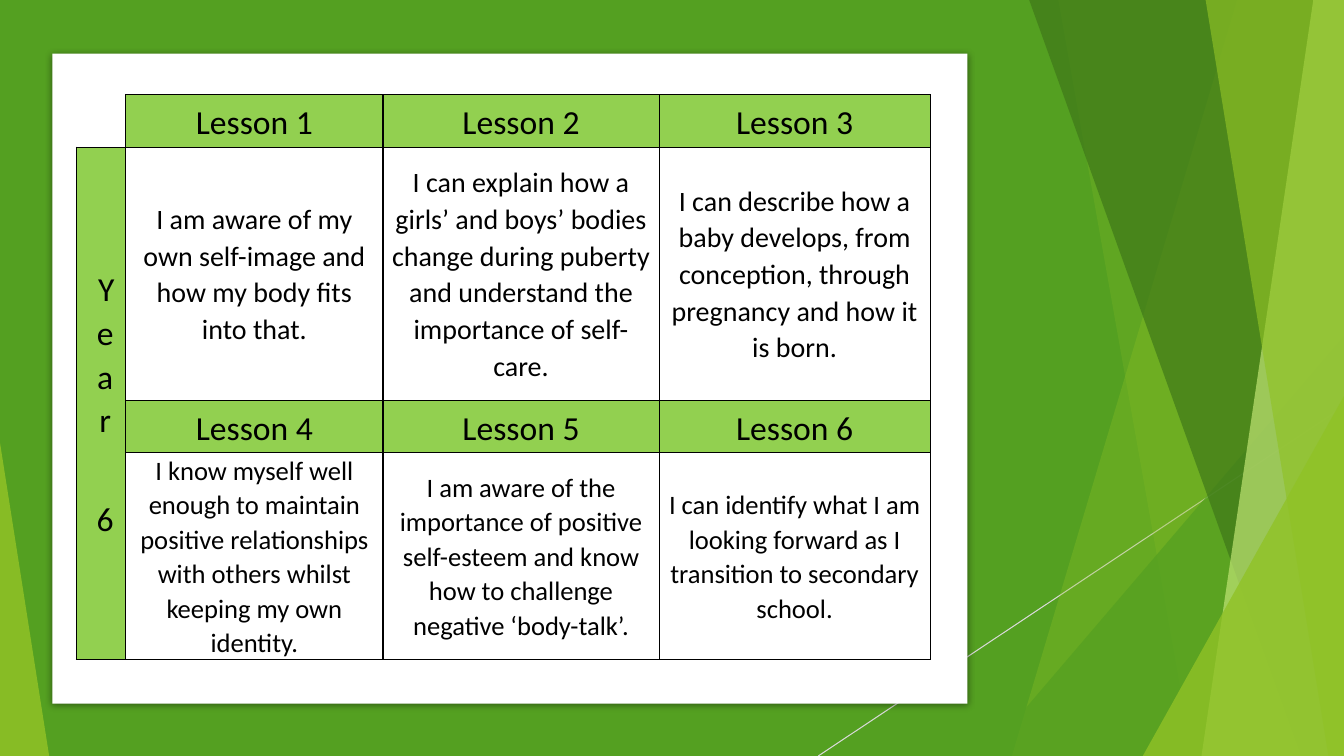
from dataclasses import dataclass

from lxml import etree
from pptx import Presentation
from pptx.dml.color import RGBColor
from pptx.enum.shapes import MSO_CONNECTOR, MSO_SHAPE
from pptx.enum.text import MSO_ANCHOR, PP_ALIGN
from pptx.oxml.ns import qn
from pptx.shapes.autoshape import Shape
from pptx.slide import Slide
from pptx.table import _Cell
from pptx.util import Cm, Pt

RECTANGLE = MSO_SHAPE.RECTANGLE
TRIANGLE = MSO_SHAPE.ISOSCELES_TRIANGLE
STRAIGHT = MSO_CONNECTOR.STRAIGHT
CENTER = PP_ALIGN.CENTER
MIDDLE = MSO_ANCHOR.MIDDLE

COLORS = {
    "green": "54A021",
    "lime": "90C226",
    "forest": "3F7819",
    "pale": "C0E474",
    "header": "92D050",
    "white": "FFFFFF",
    "black": "000000",
    "line": "D9D9D9",
}
FONT = "Calibri"
WIDTH, HEIGHT, TOP = 33.87, 19.05, -0.02
COLUMNS = [1.24, 6.48, 6.96, 6.83]
ROWS = [1.32, 6.38, 1.32, 5.11]
HEADER_INSETS = (0.3, 0.05, 0.3, 0)
BODY_INSETS = (0.18, 0, 0.18, 0)
YEAR_INSETS = (0.41, 0.2, 0.41, 0.2)


@dataclass
class Shard:
    top_left: float
    bottom_left: float
    color: str
    opacity: int


@dataclass
class Corner:
    left: float
    top: float
    width: float
    peak: float
    color: str
    opacity: int


@dataclass
class LessonRow:
    texts: list[str]
    size: float
    color: str | None
    insets: tuple[float, float, float, float]


FACETS = [
    Shard(31.19, 25.5, "lime", 30),
    Shard(26.67, 30.05, "lime", 20),
    Corner(24.82, 8.46, 9.05, 1, "green", 72),
    Shard(25.93, 32.79, "forest", 70),
    Shard(33.1, 30.28, "pale", 70),
    Shard(30.38, 33.48, "lime", 65),
    Corner(28.8, 9.98, 5.07, 1, "lime", 80),
    Corner(0, 11.15, 1.24, 0, "lime", 85),
]

LESSON_ROWS = [
    LessonRow(["Lesson 1", "Lesson 2", "Lesson 3"], 24, "header", HEADER_INSETS),
    LessonRow([
        "I am aware of my own self-image and how my body fits into that.",
        "I can explain how a girls’ and boys’ bodies change during puberty "
        "and understand the importance of self-care.",
        "I can describe how a baby develops, from conception, through "
        "pregnancy and how it is born.",
    ], 20, None, BODY_INSETS),
    LessonRow(["Lesson 4", "Lesson 5", "Lesson 6"], 24, "header", HEADER_INSETS),
    LessonRow([
        "I know myself well enough to maintain positive relationships with "
        "others whilst keeping my own identity.",
        "I am aware of the importance of positive self-esteem and know how "
        "to challenge negative ‘body-talk’.",
        "I can identify what I am looking forward as I transition to "
        "secondary school.",
    ], 19, None, BODY_INSETS),
]


def rgb(name: str) -> RGBColor:
    return RGBColor.from_string(COLORS[name])


def paint(shape: Shape, color: str, opacity: int = 100) -> None:
    shape.shadow.inherit = False
    shape.line.fill.background()
    shape.fill.solid()
    shape.fill.fore_color.rgb = rgb(color)
    if opacity < 100:
        tint = shape._element.spPr.find(qn("a:solidFill")).find(qn("a:srgbClr"))
        etree.SubElement(tint, qn("a:alpha"), val=str(opacity * 1000))


def add_box(page: Slide, kind: MSO_SHAPE, left: float, top: float,
            width: float, height: float, color: str, opacity: int = 100) -> Shape:
    box = page.shapes.add_shape(kind, Cm(left), Cm(top), Cm(width), Cm(height))
    paint(box, color, opacity)
    return box


def add_facet(page: Slide, facet: Shard | Corner) -> None:
    if isinstance(facet, Corner):
        corner = add_box(page, TRIANGLE, facet.left, facet.top, facet.width,
                         HEIGHT - facet.top, facet.color, facet.opacity)
        corner.adjustments[0] = facet.peak
        return
    builder = page.shapes.build_freeform(Cm(facet.top_left), Cm(TOP))
    outline = [(WIDTH, TOP), (WIDTH, HEIGHT), (facet.bottom_left, HEIGHT)]
    builder.add_line_segments([(Cm(x), Cm(y)) for x, y in outline])
    paint(builder.convert_to_shape(), facet.color, facet.opacity)


def add_ray(page: Slide) -> None:
    ray = page.shapes.add_connector(STRAIGHT, Cm(WIDTH), Cm(10.24),
                                    Cm(20.62), Cm(HEIGHT))
    ray.line.color.rgb = rgb("line")
    ray.line.width = Pt(0.75)
    etree.SubElement(ray._element.spPr, qn("a:effectLst"))


def add_card(page: Slide) -> None:
    card = add_box(page, RECTANGLE, 1.32, 1.35, 23.06, 16.38, "white")
    effects = card._element.spPr.find(qn("a:effectLst"))
    shadow = etree.SubElement(effects, qn("a:outerShdw"), blurRad=str(Pt(5)),
                              dist=str(Pt(1.4)), dir="5400000", rotWithShape="0")
    tint = etree.SubElement(shadow, qn("a:srgbClr"), val=COLORS["black"])
    etree.SubElement(tint, qn("a:alpha"), val="43000")


def set_borders(cell: _Cell, sides: str) -> None:
    properties = cell._tc.get_or_add_tcPr()
    for side in "LRTB":
        edge = etree.SubElement(properties, qn(f"a:ln{side}"), w=str(Pt(1)))
        if side in sides:
            fill = etree.SubElement(edge, qn("a:solidFill"))
            etree.SubElement(fill, qn("a:srgbClr"), val=COLORS["black"])
        else:
            etree.SubElement(edge, qn("a:noFill"))


def write(cell: _Cell, text: str, *, size: float, color: str | None,
          insets: tuple[float, float, float, float],
          indent: float = 0, gap: float = 0) -> None:
    (cell.margin_left, cell.margin_top,
     cell.margin_right, cell.margin_bottom) = map(Cm, insets)
    cell.vertical_anchor = MIDDLE
    if color:
        cell.fill.solid()
        cell.fill.fore_color.rgb = rgb(color)
    cell.text = text
    for index, para in enumerate(cell.text_frame.paragraphs):
        if indent:
            para._p.get_or_add_pPr().set("marL", str(Cm(indent)))
        para.alignment = CENTER
        para.line_spacing = 1.07
        para.space_after = Pt(8)
        if index:
            para.space_before = Pt(gap)
        for span in para.runs:
            span.font.name = FONT
            span.font.size = Pt(size)
            span.font.color.rgb = rgb("black")


def add_lessons(page: Slide) -> None:
    frame = page.shapes.add_table(len(ROWS), len(COLUMNS), Cm(1.93), Cm(2.39),
                                  Cm(sum(COLUMNS)), Cm(sum(ROWS)))
    table = frame.table
    table.first_row = table.horz_banding = False
    for column, width in zip(table.columns, COLUMNS):
        column.width = Cm(width)
    for row, height in zip(table.rows, ROWS):
        row.height = Cm(height)
    for cell in table.iter_cells():
        set_borders(cell, "RB" if cell is None or cell == table.cell(0, 0) else "LRTB")
        cell.fill.background()
    for row_index, lesson_row in enumerate(LESSON_ROWS):
        for column_index, text in enumerate(lesson_row.texts, start=1):
            write(table.cell(row_index, column_index), text, size=lesson_row.size,
                  color=lesson_row.color, insets=lesson_row.insets)
    year = table.cell(1, 0)
    year.merge(table.cell(3, 0))
    write(year, "Year\n6", size=24, color="header", insets=YEAR_INSETS,
          indent=0.2, gap=31)


def main() -> None:
    deck = Presentation()
    deck.slide_width, deck.slide_height = Cm(WIDTH), Cm(HEIGHT)
    page = deck.slides.add_slide(deck.slide_layouts[6])
    add_box(page, RECTANGLE, 0, 0, WIDTH, HEIGHT, "green")
    add_ray(page)
    for facet in FACETS:
        add_facet(page, facet)
    add_card(page)
    add_lessons(page)
    deck.save("out.pptx")


if __name__ == "__main__":
    main()
